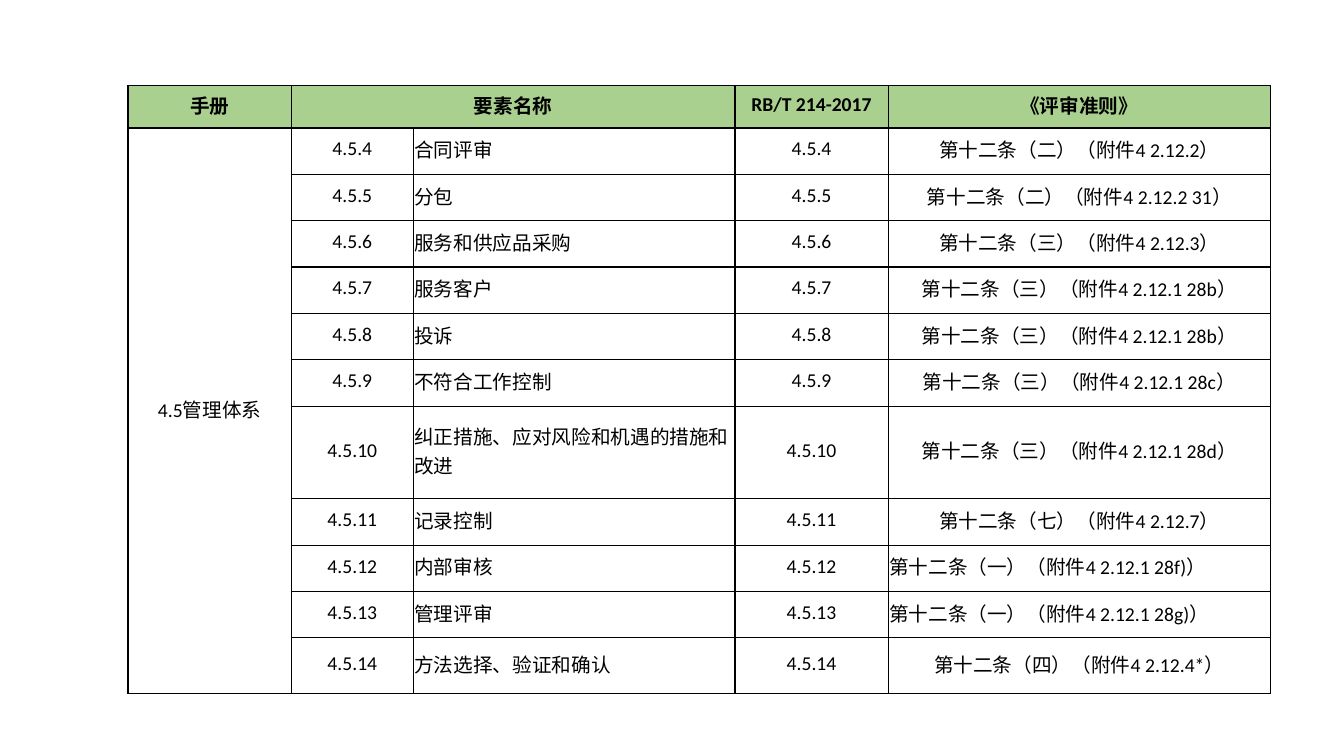
from dataclasses import dataclass
from itertools import groupby

from lxml.etree import SubElement
from pptx import Presentation
from pptx.dml.color import RGBColor as RGB
from pptx.enum.text import MSO_ANCHOR as Anchor, PP_ALIGN as Align
from pptx.oxml.ns import qn
from pptx.util import Pt

PX = 9144


@dataclass(frozen=True)
class Theme:
    ink: str = "000000"
    header: str = "A9D08E"
    latin: str = "Calibri"
    cjk: str = "Noto Sans CJK SC"
    size: int = 14
    border: int = 1
    inset: int = 1
    inset_bottom: int = 5


class Deck:
    def __init__(self, theme, width, height):
        self.theme = theme
        self.prs = Presentation()
        self.prs.slide_width = width * PX
        self.prs.slide_height = height * PX
        self.s = self.prs.slides.add_slide(self.prs.slide_layouts[6])

    def table(self, left, top, cols, rows):
        frame = self.s.shapes.add_table(len(rows), len(cols), left * PX, top * PX,
                                        sum(cols) * PX, sum(rows) * PX)
        tbl = frame.table
        tbl.first_row = tbl.horz_banding = False
        for col, width in zip(tbl.columns, cols):
            col.width = width * PX
        for row, height in zip(tbl.rows, rows):
            row.height = height * PX
        for cell in tbl.iter_cells():
            self.borders(cell)
            cell.fill.background()
        return tbl

    def borders(self, cell):
        tcPr = cell._tc.get_or_add_tcPr()
        for side in ("a:lnL", "a:lnR", "a:lnT", "a:lnB"):
            ln = SubElement(tcPr, qn(side), w=str(Pt(self.theme.border)))
            fill = SubElement(ln, qn("a:solidFill"))
            SubElement(fill, qn("a:srgbClr"), val=self.theme.ink)

    def typeface(self, font, is_latin):
        font.name = self.theme.latin if is_latin else self.theme.cjk
        if not is_latin:
            SubElement(font._element, qn("a:ea"), typeface=self.theme.cjk)

    def text(self, cell, text, align=Align.CENTER, bold=False):
        th = self.theme
        cell.vertical_anchor = Anchor.MIDDLE
        cell.margin_left = cell.margin_top = cell.margin_right = th.inset * PX
        cell.margin_bottom = th.inset_bottom * PX
        p = cell.text_frame.paragraphs[0]
        p.alignment = align
        p.font.size = Pt(th.size)
        p.font.bold = bold
        p.font.color.rgb = RGB.from_string(th.ink)
        parts = [(k, "".join(g)) for k, g in groupby(text, str.isascii)]
        for is_latin, part in parts:
            r = p.add_run()
            r.text = part
            self.typeface(p.font if len(parts) == 1 else r.font, is_latin)

    def header(self, cell, text):
        cell.fill.solid()
        cell.fill.fore_color.rgb = RGB.from_string(self.theme.header)
        self.text(cell, text, bold=True)


HEADERS = {0: "手册", 1: "要素名称", 3: "RB/T 214-2017", 4: "《评审准则》"}
FIRST_CLAUSE = 4
ELEMENTS = [
    ("合同评审", "二", "2.12.2"),
    ("分包", "二", "2.12.2 31"),
    ("服务和供应品采购", "三", "2.12.3"),
    ("服务客户", "三", "2.12.1 28b"),
    ("投诉", "三", "2.12.1 28b"),
    ("不符合工作控制", "三", "2.12.1 28c"),
    ("纠正措施、应对风险和机遇的措施和改进", "三", "2.12.1 28d"),
    ("记录控制", "七", "2.12.7"),
    ("内部审核", "一", "2.12.1 28f)"),
    ("管理评审", "一", "2.12.1 28g)"),
    ("方法选择、验证和确认", "四", "2.12.4*"),
]


def main():
    deck = Deck(Theme(), 1333, 750)
    rows = [42] + [46] * 6 + [92] + [46] * 3 + [55]
    tbl = deck.table(127, 85, [162, 121, 319, 152, 379], rows)
    tbl.cell(0, 1).merge(tbl.cell(0, 2))
    tbl.cell(1, 0).merge(tbl.cell(len(ELEMENTS), 0))
    for col, title in HEADERS.items():
        deck.header(tbl.cell(0, col), title)
    deck.text(tbl.cell(1, 0), "4.5管理体系")
    for row, (name, item, annex) in enumerate(ELEMENTS, 1):
        clause = f"4.5.{FIRST_CLAUSE + row - 1}"
        deck.text(tbl.cell(row, 1), clause)
        deck.text(tbl.cell(row, 2), name, Align.LEFT)
        deck.text(tbl.cell(row, 3), clause)
        align = Align.LEFT if item == "一" else Align.CENTER
        deck.text(tbl.cell(row, 4), f"第十二条（{item}）（附件4 {annex}）", align)
    deck.prs.save("out.pptx")


if __name__ == "__main__":
    main()
